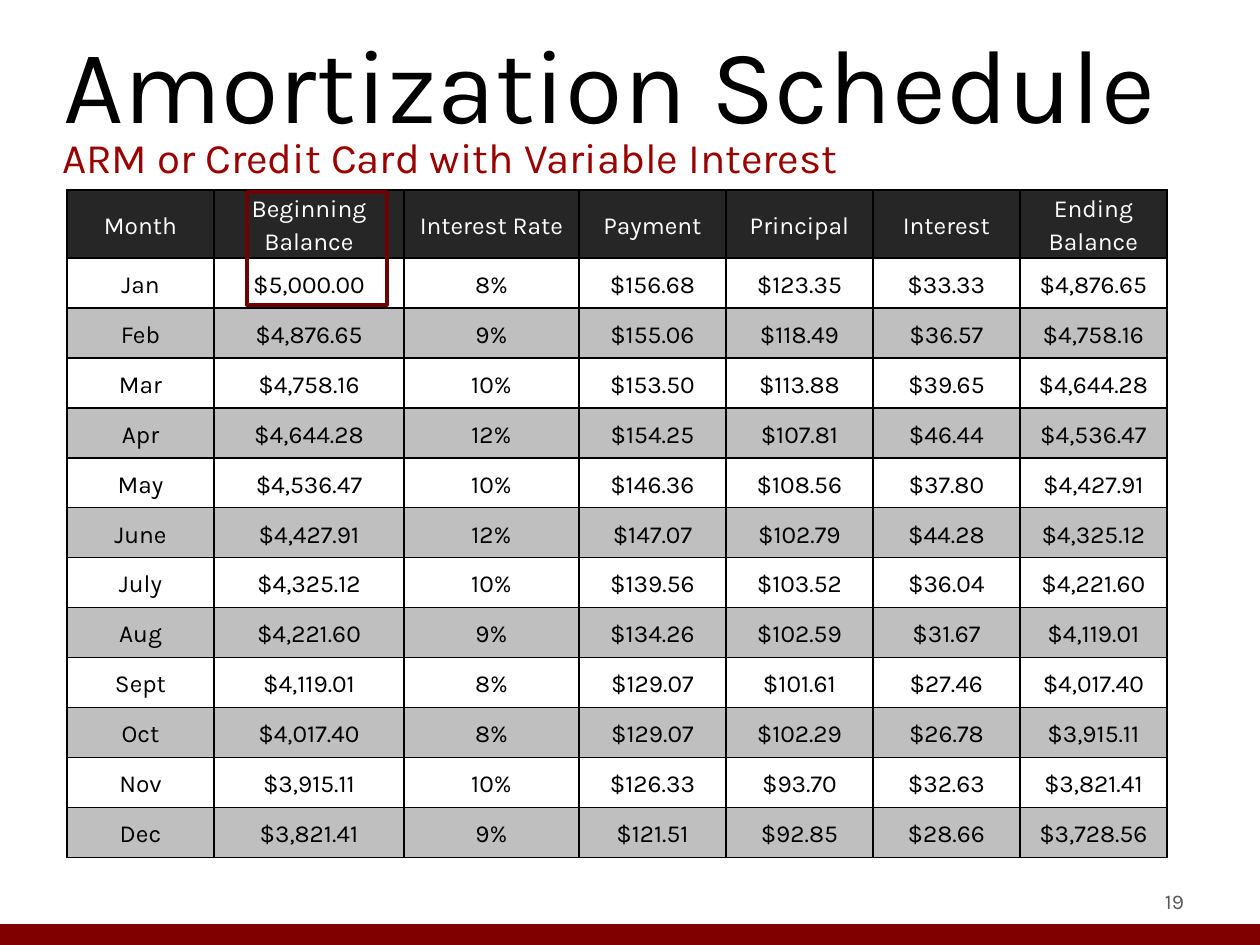
from dataclasses import dataclass
from typing import NamedTuple

from lxml.etree import SubElement
from pptx import Presentation
from pptx.dml.color import RGBColor
from pptx.enum.shapes import MSO_CONNECTOR, MSO_SHAPE
from pptx.enum.text import MSO_ANCHOR as Anchor, MSO_AUTO_SIZE as AutoSize, PP_ALIGN as Align
from pptx.oxml import parse_xml
from pptx.oxml.ns import nsdecls, qn
from pptx.util import Emu, Pt

PX = 914400 / 126  # EMU in one px


def px(n: int) -> Emu:
    return Emu(round(n * PX))


@dataclass(frozen=True)
class Theme:
    font: str = "Karla"
    black: str = "000000"
    white: str = "FFFFFF"
    header: str = "262626"
    band: str = "BFBFBF"
    subtitle: str = "990000"
    bar: str = "800000"
    highlight: str = "6F0000"
    number: str = "595959"
    title_size: int = 60
    subtitle_size: int = 24
    cell_size: int = 14
    number_size: int = 12


class Box(NamedTuple):
    left: int
    top: int
    width: int
    height: int

    def emu(self) -> list[Emu]:
        return [px(n) for n in self]


class Month(NamedTuple):
    name: str
    rate: int
    payment: float
    principal: float
    interest: float
    ending: float


THEME = Theme()
TITLE = Box(63, 18, 1197, 195)
SUBTITLE = Box(62, 102, 1154, 72)
NUMBER = Box(903, 876, 294, 50)
TABLE = Box(67, 190, 1100, 668)
HIGHLIGHT = Box(247, 192, 140, 113)
BAR_Y = 935
COLUMNS = [147, 190, 175, 147, 147, 147, 147]
HEADER_HEIGHT, ROW_HEIGHT = 68, 50

HEADINGS = ["Month", "Beginning Balance", "Interest Rate", "Payment",
            "Principal", "Interest", "Ending Balance"]
OPENING_BALANCE = 5000
MONTHS = [
    Month("Jan", 8, 156.68, 123.35, 33.33, 4876.65),
    Month("Feb", 9, 155.06, 118.49, 36.57, 4758.16),
    Month("Mar", 10, 153.50, 113.88, 39.65, 4644.28),
    Month("Apr", 12, 154.25, 107.81, 46.44, 4536.47),
    Month("May", 10, 146.36, 108.56, 37.80, 4427.91),
    Month("June", 12, 147.07, 102.79, 44.28, 4325.12),
    Month("July", 10, 139.56, 103.52, 36.04, 4221.60),
    Month("Aug", 9, 134.26, 102.59, 31.67, 4119.01),
    Month("Sept", 8, 129.07, 101.61, 27.46, 4017.40),
    Month("Oct", 8, 129.07, 102.29, 26.78, 3915.11),
    Month("Nov", 10, 126.33, 93.70, 32.63, 3821.41),
    Month("Dec", 9, 121.51, 92.85, 28.66, 3728.56),
]


def write(tf, text: str, *, size: int, color: str, align=Align.LEFT,
          spacing: float = 1.0) -> None:
    """Put one formatted paragraph without bullet or indent into a text frame."""
    p = tf.paragraphs[0]
    p.alignment, p.line_spacing, p.space_before = align, spacing, Pt(0)
    ppr = p._p.get_or_add_pPr()
    ppr.set("marL", "0")
    ppr.set("indent", "0")
    SubElement(ppr, qn("a:buNone"))
    r = p.add_run()
    r.text = text
    r.font.name, r.font.size = THEME.font, Pt(size)
    r.font.color.rgb = RGBColor.from_string(color)


def set_frame(tf, margin: int = 0, anchor=Anchor.TOP) -> None:
    tf.word_wrap, tf.auto_size, tf.vertical_anchor = True, AutoSize.NONE, anchor
    tf.margin_left = tf.margin_right = px(margin)
    tf.margin_top = tf.margin_bottom = px(margin // 2)


def place(sp, box: Box) -> None:
    sp.left, sp.top, sp.width, sp.height = box.emu()


def set_borders(cell, color: str, width: int) -> None:
    tcpr = cell._tc.get_or_add_tcPr()
    for i, side in enumerate(("lnL", "lnR", "lnT", "lnB")):
        tcpr.insert(i, parse_xml(
            f'<a:{side} {nsdecls("a")} w="{Pt(width)}"><a:solidFill>'
            f'<a:srgbClr val="{color}"/></a:solidFill></a:{side}>'))


def fill_cell(cell, text: str, fill: str, color: str) -> None:
    cell.fill.solid()
    cell.fill.fore_color.rgb = RGBColor.from_string(fill)
    cell.vertical_anchor = Anchor.MIDDLE
    cell.margin_left = cell.margin_right = px(9)
    cell.margin_top = cell.margin_bottom = 0
    write(cell.text_frame, text, size=THEME.cell_size, color=color,
          align=Align.CENTER, spacing=1.15)
    set_borders(cell, THEME.black, 1)


def schedule_rows() -> list[list[str]]:
    """Each month begins with the balance that the month before ended with."""
    rows, beginning = [HEADINGS], OPENING_BALANCE
    for m in MONTHS:
        amounts = (m.payment, m.principal, m.interest, m.ending)
        rows.append([m.name, f"${beginning:,.2f}", f"{m.rate}%",
                     *(f"${a:,.2f}" for a in amounts)])
        beginning = m.ending
    return rows


def add_schedule(s) -> None:
    rows = schedule_rows()
    table = s.shapes.add_table(len(rows), len(COLUMNS), *TABLE.emu()).table
    table.horz_banding = False
    for col, width in zip(table.columns, COLUMNS):
        col.width = px(width)
    for i, texts in enumerate(rows):
        table.rows[i].height = px(ROW_HEIGHT if i else HEADER_HEIGHT)
        if i == 0:
            fill, color = THEME.header, THEME.white
        else:
            fill, color = (THEME.white if i % 2 else THEME.band), THEME.black
        for j, text in enumerate(texts):
            fill_cell(table.cell(i, j), text, fill, color)


def main() -> None:
    prs = Presentation()
    prs.slide_width, prs.slide_height = px(1260), px(945)
    s = prs.slides.add_slide(prs.slide_layouts[1])

    # Bottom bar
    bar = s.shapes.add_connector(MSO_CONNECTOR.STRAIGHT, 0, px(BAR_Y), px(1260), px(BAR_Y))
    bar.line.color.rgb = RGBColor.from_string(THEME.bar)
    bar.line.width = Pt(12)
    SubElement(bar._element.spPr, qn("a:effectLst"))

    # Title and subtitle
    title, body = s.shapes.title, s.placeholders[1]
    place(title, TITLE)
    set_frame(title.text_frame)
    write(title.text_frame, "Amortization Schedule",
          size=THEME.title_size, color=THEME.black)
    place(body, SUBTITLE)
    set_frame(body.text_frame)
    write(body.text_frame, "ARM or Credit Card with Variable Interest",
          size=THEME.subtitle_size, color=THEME.subtitle, spacing=1.58)

    # Slide number
    tf = s.shapes.add_textbox(*NUMBER.emu()).text_frame
    set_frame(tf, margin=13, anchor=Anchor.MIDDLE)
    write(tf, "19", size=THEME.number_size, color=THEME.number, align=Align.RIGHT)

    # Schedule, with the opening balance framed
    add_schedule(s)
    frame = s.shapes.add_shape(MSO_SHAPE.RECTANGLE, *HIGHLIGHT.emu())
    frame.shadow.inherit = False
    frame.fill.background()
    frame.line.color.rgb = RGBColor.from_string(THEME.highlight)
    frame.line.width = Pt(2)

    prs.save("out.pptx")


if __name__ == "__main__":
    main()
